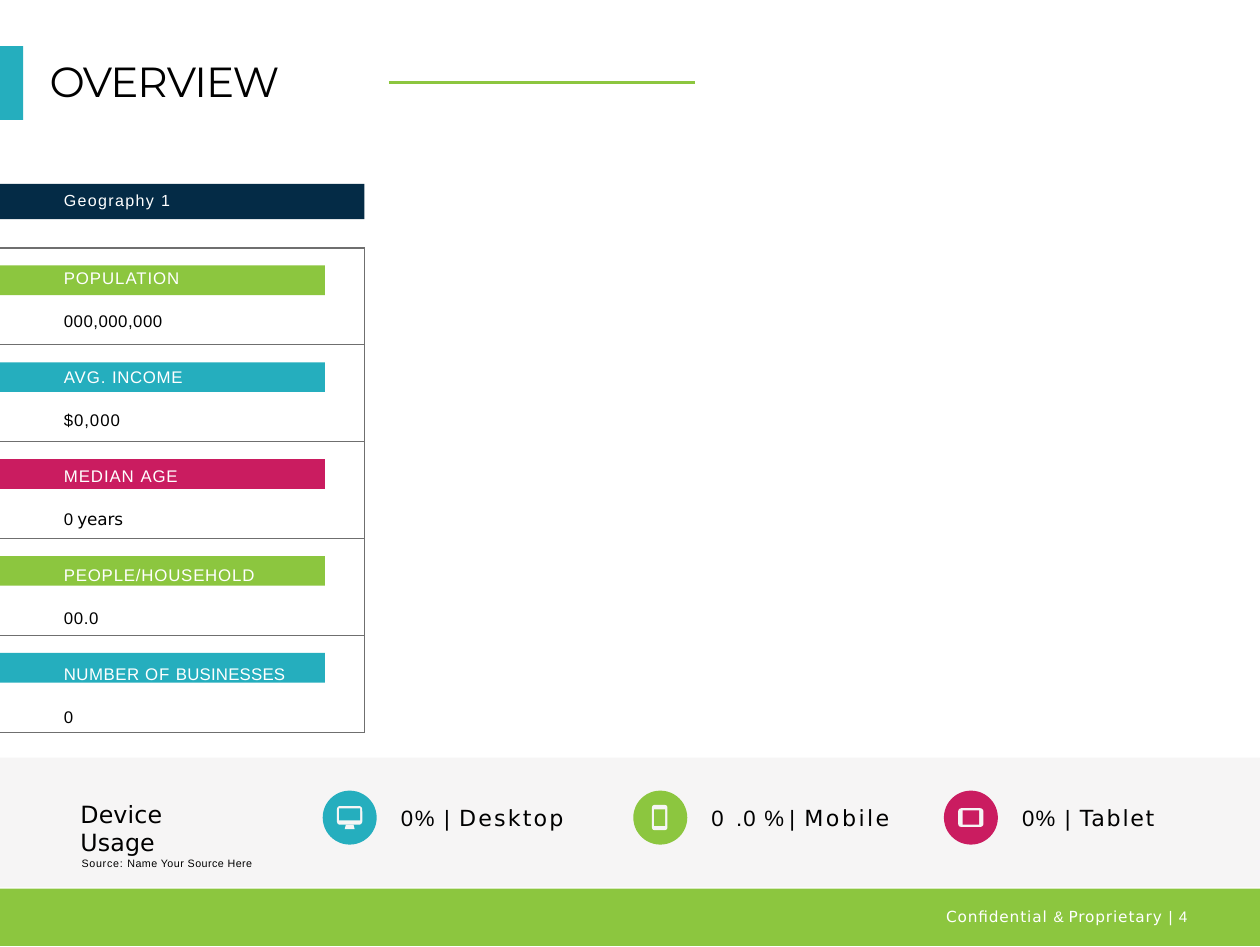
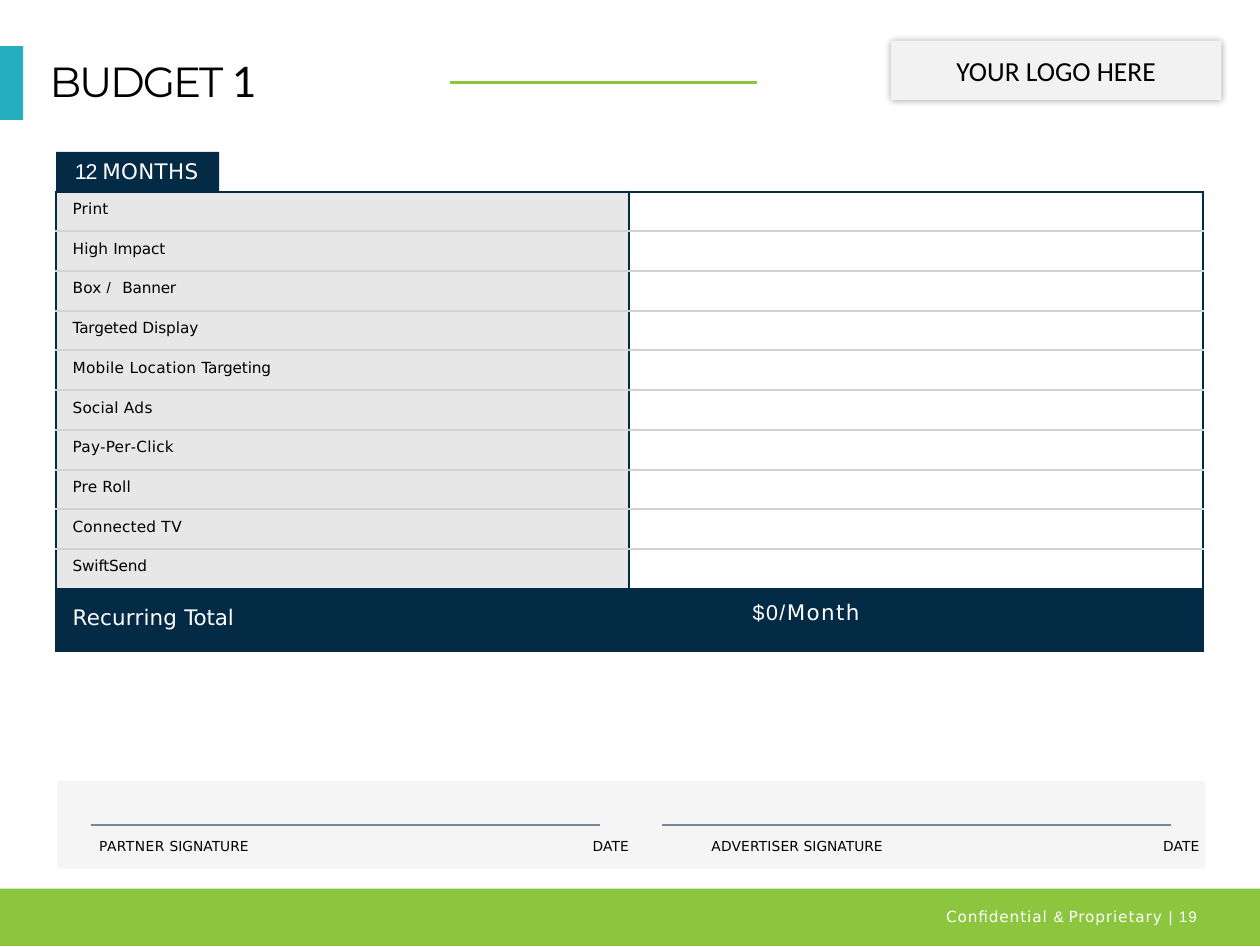
from dataclasses import dataclass

from lxml import etree
from pptx import Presentation
from pptx.dml.color import RGBColor
from pptx.enum import shapes, text
from pptx.oxml import ns
from pptx.util import Inches, Pt


@dataclass(frozen=True)
class Theme:
    navy: str = "042B46"
    teal: str = "25AEBE"
    green: str = "8CC63F"
    pink: str = "CA1C60"
    panel: str = "F6F5F5"
    rule: str = "6F6F6F"
    sign_rule: str = "758798"
    row_rule: str = "D0D3D4"
    label_cell: str = "E7E7E8"
    logo_box: str = "F2F2F2"
    white: str = "FFFFFF"
    black: str = "000000"
    sans: str = "DejaVu Sans"
    arial: str = "Arial"
    title: str = "Montserrat"
    title_digit: str = "Lato"
    logo: str = "Calibri"
    title_size: float = 27.5
    logo_size: float = 18
    device_head: float = 15.5
    device_size: float = 14.5
    strong: float = 14
    stat: float = 11
    geography: float = 10.5
    body: float = 10
    sign: float = 9
    source: float = 7


T = Theme()
WIDTH, HEIGHT = 11.44, 8.6
BOX = shapes.MSO_SHAPE

# A run is (text, letter spacing in points, font).
GEOGRAPHY = [("Geography ", 0.9, T.arial), ("1", -1.9, T.arial)]
STATS = [
    (T.green, [("POPULATION", 0.6, T.arial)], [("000,000,000", 0.3, T.arial)]),
    (T.teal, [("AVG. ", 0.6, T.arial), ("INCOME", 0.4, T.arial)],
     [("$0,000", 0.6, T.arial)]),
    (T.pink, [("MEDIAN ", 0.6, T.arial), ("AGE", 0.5, T.arial)],
     [("0 ", -0.3, T.arial), ("years", -0.1, T.sans)]),
    (T.green, [("PEOPLE/HOUSEHOLD", 0.5, T.arial)], [("00.0", 0.4, T.arial)]),
    (T.teal, [("NUMBER ", 0.3, T.arial), ("OF ", 0.6, T.arial),
              ("BUSINESSES", 0.1, T.arial)], [("0", -0.4, T.arial)]),
]
DEVICE_HEAD = [("Device Usage", 0.1, T.sans)]
SOURCE = [("Source: ", 0.5, T.arial), ("Name Your Source Here", 0.3, T.arial)]
# Icon parts are offset from the corner of the circle: shape, box, is it a cut-out.
DEVICES = [
    (T.teal, [("0% ", 1.1, T.arial), ("| ", 1, T.arial), ("Desktop", 1.4, T.sans)],
     [(BOX.ROUNDED_RECTANGLE, (0.13, 0.14, 0.23, 0.17), False),
      (BOX.RECTANGLE, (0.15, 0.16, 0.19, 0.11), True),
      (BOX.TRAPEZOID, (0.2, 0.31, 0.09, 0.04), False)]),
    (T.green, [("0 ", 2, T.arial), (".0 ", 0.8, T.arial), ("% ", -0.6, T.arial),
               ("| ", 1, T.arial), ("Mobile", 1.6, T.sans)],
     [(BOX.ROUNDED_RECTANGLE, (0.17, 0.13, 0.14, 0.23), False),
      (BOX.RECTANGLE, (0.19, 0.17, 0.1, 0.15), True)]),
    (T.pink, [("0", 0.8, T.arial), ("% ", 1.1, T.arial), ("| ", 1, T.arial),
              ("Tablet", 1.1, T.sans)],
     [(BOX.ROUNDED_RECTANGLE, (0.13, 0.16, 0.23, 0.17), False),
      (BOX.RECTANGLE, (0.17, 0.18, 0.15, 0.13), True)]),
]
TERM = [("12 ", -0.8, T.arial), ("MONTHS", 0.2, T.sans)]
BUDGET = [
    [("Print", 0.1, T.sans)],
    [("High ", 0.1, T.sans), ("Impact", -0.1, T.sans)],
    [("Box ", 0.1, T.sans), ("/ ", 2.4, T.arial), ("Banner", -0.1, T.sans)],
    [("Targeted ", -0.1, T.sans), ("Display", 0, T.sans)],
    [("Mobile Location ", 0.2, T.sans), ("Targeting", -0.1, T.sans)],
    [("Social ", 0.1, T.sans), ("Ads", 0.3, T.sans)],
    [("Pay", 0.2, T.sans), ("-", 0.2, T.arial), ("Per", 0.2, T.sans),
     ("-", 0.2, T.arial), ("Click", 0.2, T.sans)],
    [("Pre ", 0.1, T.sans), ("Roll", 0.2, T.sans)],
    [("Connected ", 0.1, T.sans), ("TV", 0.5, T.sans)],
    [("SwiftSend", -0.1, T.sans)],
]
TOTAL = [("Recurring ", 0.1, T.sans), ("Total", -0.1, T.sans)]
TOTAL_VALUE = [("$0/", 0.9, T.arial), ("Month", 0.9, T.sans)]
SIGNATURES = [("PARTNER ", 0.3, T.sans), ("SIGNATURE\t", 0, T.sans),
              ("DATE\tADVERTISER ", 0.1, T.sans), ("SIGNATURE\t", 0, T.sans),
              ("DATE", 0.1, T.sans)]
SIGNATURE_TABS = (4.48, 5.56, 9.66)


def rgb(color):
    return RGBColor.from_string(color)


def child(parent, tag, **attrs):
    return etree.SubElement(parent, ns.qn(tag), {k: str(v) for k, v in attrs.items()})


def add_runs(p, runs, size, color):
    for words, spacing, font in runs:
        r = p.add_run()
        r.text = words
        for name, value in {"size": Pt(size), "name": font}.items():
            setattr(r.font, name, value)
        r.font.color.rgb = rgb(color)
        r.font._element.set("spc", str(round(spacing * 100)))


def set_insets(target, left, top):
    """Inset a text frame or table cell at the left and top only."""
    values = {"left": left, "top": top, "right": 0, "bottom": 0}
    for side, value in values.items():
        setattr(target, f"margin_{side}", Inches(value))


def write(sp, runs, size, color, left=0.0, top=0.01):
    """Fill a shape or text box with one left-aligned paragraph."""
    tf = sp.text_frame
    tf.word_wrap = True
    tf.vertical_anchor = text.MSO_ANCHOR.TOP
    set_insets(tf, left, top)
    p = tf.paragraphs[0]
    p.alignment = text.PP_ALIGN.LEFT
    add_runs(p, runs, size, color)
    return p


def add_text(s, box, runs, size, color=T.black, left=0.0, top=0.01):
    sp = s.shapes.add_textbox(*map(Inches, box))
    write(sp, runs, size, color, left, top)
    return sp


def add_block(s, box, color, kind=BOX.RECTANGLE):
    sp = s.shapes.add_shape(kind, *map(Inches, box))
    sp.shadow.inherit = False
    sp.fill.solid()
    sp.fill.fore_color.rgb = rgb(color)
    sp.line.fill.background()
    return sp


def add_line(s, ends, color, width=1.0):
    line = s.shapes.add_connector(shapes.MSO_CONNECTOR.STRAIGHT, *map(Inches, ends))
    line.line.color.rgb = rgb(color)
    line.line.width = Pt(width)
    child(line._element.spPr, "a:effectLst")


def add_frame(prs, title, rule_left, page):
    """Start a slide with its title, accent, rule and footer."""
    s = prs.slides.add_slide(prs.slide_layouts[6])
    add_block(s, (0, 0.42, 0.21, 0.67), T.teal)
    add_text(s, (0.44, 0.49, 2.6, 0.49), title, T.title_size, left=0.01)
    add_line(s, (rule_left, 0.75, rule_left + 2.78, 0.75), T.green, 1.5)
    add_block(s, (0, 8.07, WIDTH, 0.52), T.green)
    footer = [("Conﬁdential ", 0.6, T.sans), ("& ", 0.2, T.arial),
              ("Proprietary ", 0.6, T.sans), ("| ", 0.7, T.arial),
              (page, 0.6, T.arial)]
    sp = add_text(s, (8.58, 8.25, 2.39, 0.17), footer, T.body, T.white, 0.01, 0)
    sp.text_frame.paragraphs[0].line_spacing = Pt(11)
    return s


def add_stats(s):
    top, right, step, text_step = 2.25, 3.31, 0.88, 0.9
    bottom = top + step * len(STATS)
    add_line(s, (right, top, right, bottom), T.rule)
    for i in range(len(STATS) + 1):
        y = top + step * i
        add_line(s, (0, y, right, y), T.rule)
    for i, (color, label, value) in enumerate(STATS):
        add_block(s, (0, top + 0.16 + step * i, 2.95, 0.27), color)
        box = (0.57, 2.42 + text_step * i, 2.3, 0.57)
        sp = add_text(s, box, label, T.stat, T.white, 0.01)
        p = sp.text_frame.add_paragraph()
        p.space_before = Pt(14.7)
        add_runs(p, value, T.stat, T.black)


def add_devices(s):
    add_block(s, (0, 6.88, WIDTH, 1.18), T.panel)
    add_text(s, (0.73, 7.25, 1.48, 0.5), DEVICE_HEAD, T.device_head)
    add_text(s, (0.74, 7.76, 2.58, 0.13), SOURCE, T.source, top=0.02)
    for i, (color, label, parts) in enumerate(DEVICES):
        x, y = 2.93 + 2.82 * i, 7.18
        add_block(s, (x, y, 0.49, 0.49), color, BOX.OVAL)
        for kind, (dx, dy, w, h), cut_out in parts:
            add_block(s, (x + dx, y + dy, w, h), color if cut_out else T.panel, kind)
        add_text(s, (x + 0.71, 7.29, 1.93, 0.26), label, T.device_size)


def style_cell(cell, fill, edges, left=0.0, top=0.0):
    """Set the borders (left, right, top, bottom), fill and insets."""
    tc_pr = cell._tc.get_or_add_tcPr()
    for side, color in zip("LRTB", edges):
        ln = child(tc_pr, f"a:ln{side}", w=Pt(1.5))
        child(child(ln, "a:solidFill"), "a:srgbClr", val=color)
    cell.fill.solid()
    cell.fill.fore_color.rgb = rgb(fill)
    set_insets(cell, left, top)


def add_budget(s):
    count, body_height, total_height = len(BUDGET), 3.61, 0.57
    table = s.shapes.add_table(count + 1, 2, Inches(0.51), Inches(1.74), Inches(10.41),
                               Inches(body_height + total_height)).table
    table.first_row = table.horz_banding = False
    for col in table.columns:
        col.width = Inches(10.41 / 2)
    for i, runs in enumerate(BUDGET):
        table.rows[i].height = Inches(body_height / count)
        edges = (T.navy, T.navy, T.navy if i == 0 else T.row_rule,
                 T.navy if i == count - 1 else T.row_rule)
        label, amount = table.rows[i].cells
        style_cell(label, T.label_cell, edges, 0.15, 0.08)
        add_runs(label.text_frame.paragraphs[0], runs, T.body, T.black)
        style_cell(amount, T.white, edges)
        amount.text_frame.paragraphs[0].font.size = Pt(T.body)
    table.rows[count].height = Inches(total_height)
    totals = [(TOTAL, 0.15, 0.15), (TOTAL_VALUE, 1.12, 0.11)]
    for cell, (runs, left, top) in zip(table.rows[count].cells, totals):
        style_cell(cell, T.navy, [T.navy] * 4, left, top)
        add_runs(cell.text_frame.paragraphs[0], runs, T.strong, T.white)
    tab = add_block(s, (0.51, 1.38, 1.48, 0.36), T.navy)
    write(tab, TERM, T.strong, T.white, 0.17, 0.06)


def add_signatures(s):
    panel = add_block(s, (0.52, 7.09, 10.42, 0.8), T.panel)
    p = write(panel, SIGNATURES, T.sign, T.black, 0.38, 0.52)
    tabs = child(p._p.get_or_add_pPr(), "a:tabLst")
    for position in SIGNATURE_TABS:
        child(tabs, "a:tab", pos=Inches(position), algn="l")
    for x in (0.83, 6.01):
        add_line(s, (x, 7.49, x + 4.62, 7.49), T.sign_rule)


def add_logo_box(s):
    sp = add_block(s, (8.09, 0.37, 3, 0.54), T.logo_box)
    effects = sp._element.spPr.find(ns.qn("a:effectLst"))
    shadow = child(effects, "a:outerShdw", blurRad=Pt(5), dist=0, dir=0,
                   algn="ctr", rotWithShape=0)
    color = child(shadow, "a:srgbClr", val=T.black)
    child(color, "a:alpha", val=40000)
    tf = sp.text_frame
    tf.vertical_anchor = text.MSO_ANCHOR.MIDDLE
    p = tf.paragraphs[0]
    p.alignment = text.PP_ALIGN.CENTER
    add_runs(p, [("YOUR LOGO HERE", 0, T.logo)], T.logo_size, T.black)


def main():
    prs = Presentation()
    prs.slide_width, prs.slide_height = Inches(WIDTH), Inches(HEIGHT)

    s = add_frame(prs, [("OVERVIEW", -0.7, T.title)], 3.53, "4")
    geography = add_block(s, (0, 1.67, 3.31, 0.32), T.navy)
    write(geography, GEOGRAPHY, T.geography, T.white, 0.58, 0.06)
    add_stats(s)
    add_devices(s)

    title = [("BUDGET ", -1.4, T.title), ("1", -2.9, T.title_digit)]
    s = add_frame(prs, title, 4.09, "19")
    add_budget(s)
    add_signatures(s)
    add_logo_box(s)

    prs.save("out.pptx")


if __name__ == "__main__":
    main()
